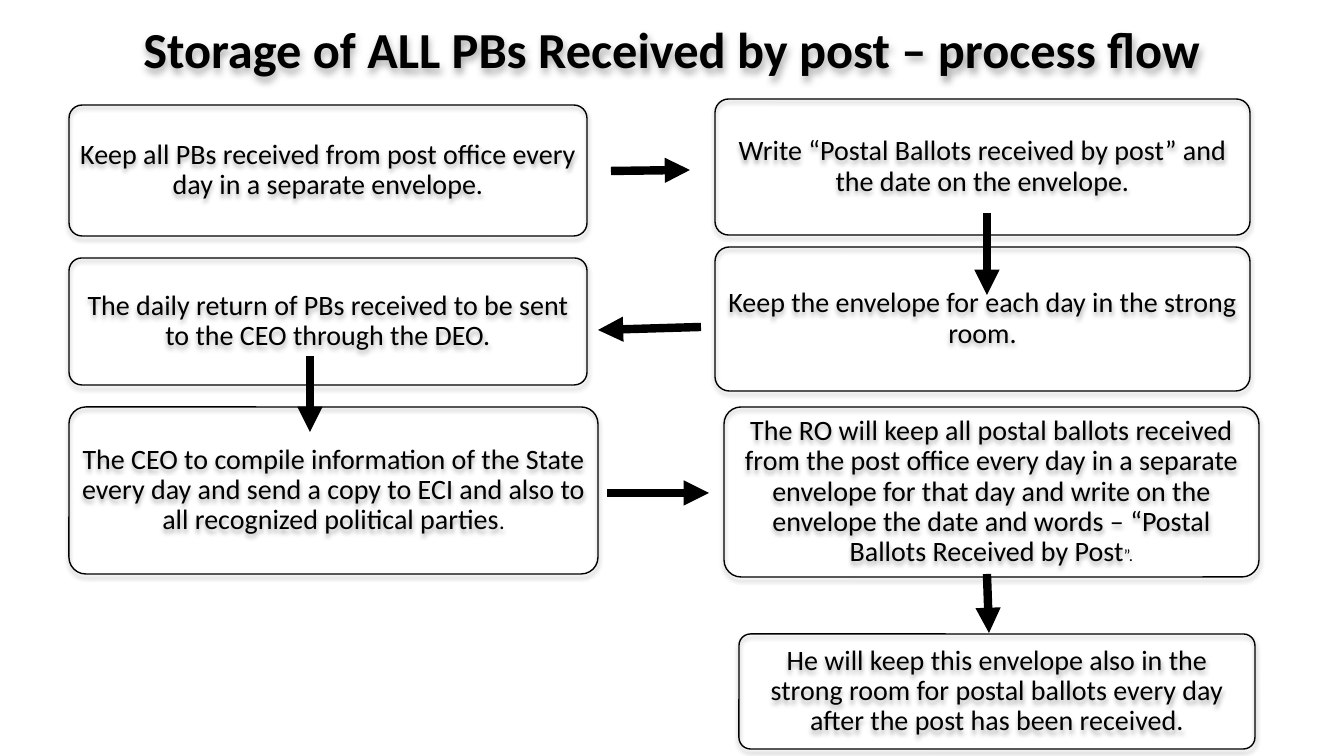
from dataclasses import dataclass

from lxml.etree import SubElement
from pptx import Presentation
from pptx.dml.color import RGBColor as RGB
from pptx.enum.shapes import MSO_CONNECTOR as Link, MSO_SHAPE as Kind
from pptx.enum.text import MSO_ANCHOR as Anchor, MSO_AUTO_SIZE as Fit, PP_ALIGN as Align
from pptx.oxml.ns import qn
from pptx.util import Pt


@dataclass(frozen=True)
class Theme:
    font: str = "Calibri"
    ink: RGB = RGB(0, 0, 0)
    title: int = 36
    body: int = 20
    edge: int = 1
    arrow: int = 6
    pad: int = 10
    curve: float = 0.1


THEME = Theme()

TITLE = "Storage of ALL PBs Received by post – process flow"

# (left, top, width, height), text, ending, size of the ending
STEPS = [
    ((69, 105, 518, 131),
     "Keep all PBs received from post office every day in a separate envelope.", "", 0),
    ((715, 99, 535, 136),
     "Write “Postal Ballots received by post” and the date on the envelope.", "", 0),
    ((69, 258, 518, 127),
     "The daily return of PBs received to be sent to the CEO through the DEO.", "", 0),
    ((715, 247, 535, 144),
     "Keep the envelope for each day in the strong room.", "", 0),
    ((69, 407, 529, 167),
     "The CEO to compile information of the State every day and send a copy to ECI "
     "and also to all recognized political parties", ".", 16),
    ((724, 407, 535, 170),
     "The RO will keep all postal ballots received from the post office every day in a "
     "separate envelope for that day and write on the envelope the date and words – "
     "“Postal Ballots Received by Post", "”.", 12),
    ((739, 634, 516, 115),
     "He will keep this envelope also in the strong room for postal ballots every day "
     "after the post has been received.", "", 0),
]

# (from x, from y, to x, to y)
ARROWS = [
    (611, 171, 690, 170),
    (987, 213, 987, 295),
    (701, 327, 598, 330),
    (310, 356, 310, 432),
    (607, 493, 709, 493),
    (987, 574, 989, 633),
]


def px(num):
    """Turn px, at 100.8 to the inch, into EMU."""
    return round(num * 914400 / 100.8)


def place(shape, area):
    shape.left, shape.top, shape.width, shape.height = map(px, area)


def style(para, size, bold=False):
    para.alignment = Align.CENTER
    font = para.font
    font.name, font.size, font.bold = THEME.font, Pt(size), bold
    font.color.rgb = THEME.ink


def shade(shape):
    """Give the shape a soft shadow straight below it."""
    shape.shadow.inherit = False
    effect = shape.element.spPr.find(qn("a:effectLst"))
    outer = SubElement(effect, qn("a:outerShdw"), blurRad=str(Pt(3.5)),
                       dist=str(Pt(2.2)), dir="5400000", rotWithShape="0")
    color = SubElement(outer, qn("a:srgbClr"), val=str(THEME.ink))
    SubElement(color, qn("a:alpha"), val="32000")


def add_title(slide):
    title = slide.shapes.title
    place(title, (0, 12, 1344, 72))
    frame = title.text_frame
    frame.text = TITLE
    frame.auto_size = Fit.NONE
    frame.vertical_anchor = Anchor.MIDDLE
    style(frame.paragraphs[0], THEME.title, bold=True)
    shade(title)


def add_step(slide, area, text, end, size):
    box = slide.shapes.add_shape(Kind.ROUNDED_RECTANGLE, *map(px, area))
    box.adjustments[0] = THEME.curve
    box.fill.background()
    box.line.color.rgb = THEME.ink
    box.line.width = Pt(THEME.edge)
    shade(box)

    frame = box.text_frame
    frame.word_wrap = True
    frame.vertical_anchor = Anchor.MIDDLE
    # The rounded corners already inset the text by 0.29 of their radius.
    pad = px(THEME.pad - 0.29 * THEME.curve * area[3])
    frame.margin_left = frame.margin_right = pad
    frame.margin_top = frame.margin_bottom = pad
    para = frame.paragraphs[0]
    para.line_spacing = 0.9
    style(para, THEME.body)
    para.add_run().text = text
    if end:
        run = para.add_run()
        run.text = end
        run.font.size = Pt(size)


def add_arrow(slide, ends):
    arrow = slide.shapes.add_connector(Link.STRAIGHT, *map(px, ends))
    arrow.line.color.rgb = THEME.ink
    arrow.line.width = Pt(THEME.arrow)
    props = arrow.element.spPr
    SubElement(props.find(qn("a:ln")), qn("a:tailEnd"), type="triangle")
    SubElement(props, qn("a:effectLst"))


def main():
    deck = Presentation()
    deck.slide_width, deck.slide_height = px(1344), px(756)
    slide = deck.slides.add_slide(deck.slide_layouts.get_by_name("Title Only"))
    add_title(slide)
    for step in STEPS:
        add_step(slide, *step)
    for ends in ARROWS:
        add_arrow(slide, ends)
    deck.save("out.pptx")


if __name__ == "__main__":
    main()
